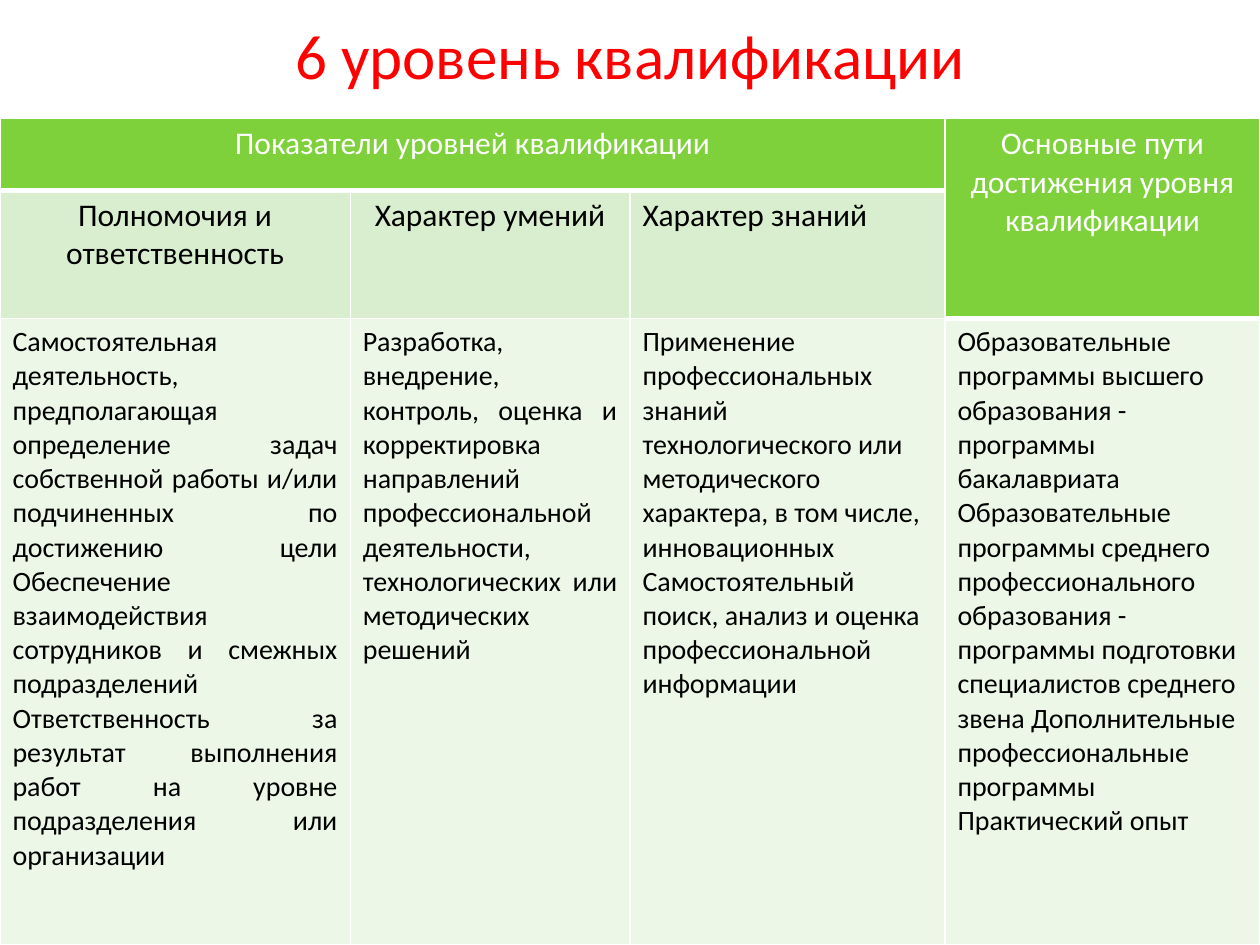
from dataclasses import dataclass

from pptx import Presentation
from pptx.dml.color import RGBColor
from pptx.enum.text import MSO_ANCHOR, PP_ALIGN
from pptx.oxml import parse_xml
from pptx.oxml.ns import nsdecls
from pptx.util import Inches, Pt

LEFT, CENTER, JUSTIFY = PP_ALIGN.LEFT, PP_ALIGN.CENTER, PP_ALIGN.JUSTIFY
MIDDLE = MSO_ANCHOR.MIDDLE
WHITE, BLACK, RED = "FFFFFF", "000000", "FF0000"
GREEN, LIGHT_GREEN, PALE_GREEN = "7FD13B", "D8EECE", "ECF7E8"
COLUMN_WIDTHS = (2.78, 2.22, 2.5, 2.5)
ROW_HEIGHTS = (0.57, 1.02, 4.97)


@dataclass
class Entry:
    """Text of one table cell, its place and its alignment."""
    row: int
    column: int
    text: str
    align: PP_ALIGN = CENTER
    rows: int = 1
    columns: int = 1


@dataclass
class RowStyle:
    """Look shared by the cells of one table row."""
    fill: str
    color: str
    size: int
    bottom: int


ROW_STYLES = (
    RowStyle(GREEN, WHITE, 18, 3),
    RowStyle(LIGHT_GREEN, BLACK, 18, 1),
    RowStyle(PALE_GREEN, BLACK, 16, 1),
)
ENTRIES = (
    Entry(0, 0, "Показатели уровней квалификации", columns=3),
    Entry(0, 3, "Основные пути достижения уровня квалификации", rows=2),
    Entry(1, 0, "Полномочия и ответственность"),
    Entry(1, 1, "Характер умений"),
    Entry(1, 2, "Характер знаний", LEFT),
    Entry(2, 0, "Самостоятельная деятельность, предполагающая определение задач "
          "собственной работы и/или подчиненных по достижению цели Обеспечение "
          "взаимодействия сотрудников и смежных подразделений Ответственность за "
          "результат выполнения работ на уровне подразделения или организации", JUSTIFY),
    Entry(2, 1, "Разработка, внедрение, контроль, оценка и корректировка направлений "
          "профессиональной деятельности, технологических или методических решений", JUSTIFY),
    Entry(2, 2, "Применение профессиональных знаний технологического или методического "
          "характера, в том числе, инновационных Самостоятельный поиск, анализ и оценка "
          "профессиональной информации", LEFT),
    Entry(2, 3, "Образовательные программы высшего образования - программы бакалавриата "
          "Образовательные программы среднего профессионального образования - программы "
          "подготовки специалистов среднего звена Дополнительные профессиональные "
          "программы Практический опыт", LEFT),
)


def rgb(value: str) -> RGBColor:
    """Turn a hex string into a colour."""
    return RGBColor.from_string(value)


def write(frame, text: str, *, size: int, color: str, align: PP_ALIGN) -> None:
    """Put one formatted paragraph into a text frame."""
    frame.word_wrap = True
    para = frame.paragraphs[0]
    para.alignment = align
    span = para.add_run()
    span.text = text
    span.font.name = "Calibri"
    span.font.size = Pt(size)
    span.font.color.rgb = rgb(color)


def set_borders(cell, bottom: int) -> None:
    """Draw white cell borders with a given bottom width in points."""
    properties = cell._tc.get_or_add_tcPr()
    widths = {"lnL": 1, "lnR": 1, "lnT": 1, "lnB": bottom}
    for index, (side, width) in enumerate(widths.items()):
        properties.insert(index, parse_xml(
            f'<a:{side} {nsdecls("a")} w="{Pt(width)}"><a:solidFill>'
            f'<a:srgbClr val="{WHITE}"/></a:solidFill></a:{side}>'))


def add_title(page) -> None:
    """Add the slide heading."""
    box = page.shapes.add_textbox(0, 0, Inches(10), Inches(0.86))
    box.text_frame.vertical_anchor = MIDDLE
    write(box.text_frame, "6 уровень квалификации", size=36, color=RED, align=CENTER)


def add_level_table(page) -> None:
    """Add the table of qualification indicators."""
    table = page.shapes.add_table(
        len(ROW_HEIGHTS), len(COLUMN_WIDTHS), 0, Inches(0.94),
        Inches(sum(COLUMN_WIDTHS)), Inches(sum(ROW_HEIGHTS))).table
    for column, width in zip(table.columns, COLUMN_WIDTHS):
        column.width = Inches(width)
    for row, height, style in zip(table.rows, ROW_HEIGHTS, ROW_STYLES):
        row.height = Inches(height)
        for cell in row.cells:
            cell.fill.solid()
            cell.fill.fore_color.rgb = rgb(style.fill)
            set_borders(cell, style.bottom)
    for entry in ENTRIES:
        cell = table.cell(entry.row, entry.column)
        if entry.rows > 1 or entry.columns > 1:
            cell.merge(table.cell(entry.row + entry.rows - 1,
                                  entry.column + entry.columns - 1))
        style = ROW_STYLES[entry.row]
        write(cell.text_frame, entry.text, size=style.size, color=style.color,
              align=entry.align)


def main() -> None:
    """Build and save the deck."""
    deck = Presentation()
    deck.slide_width, deck.slide_height = Inches(10), Inches(7.5)
    page = deck.slides.add_slide(deck.slide_layouts[6])
    add_title(page)
    add_level_table(page)
    deck.save("out.pptx")


if __name__ == "__main__":
    main()
